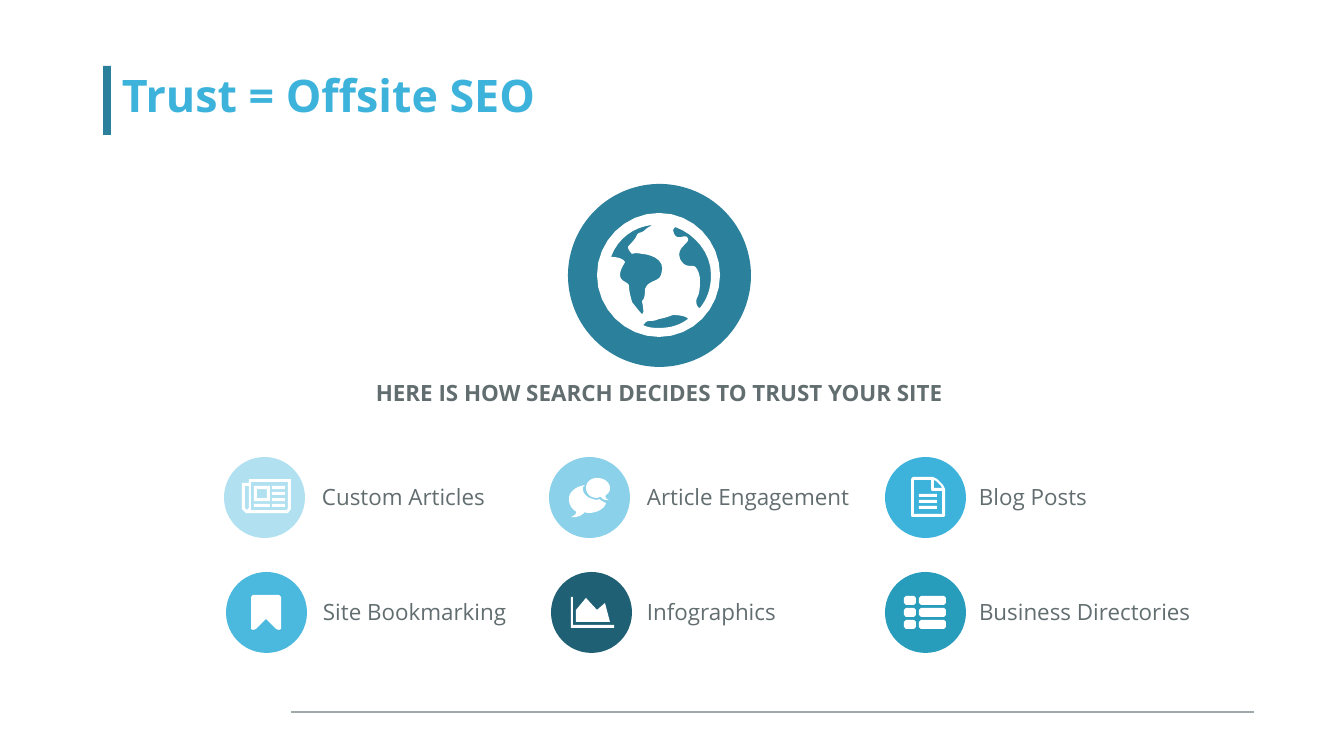
from dataclasses import dataclass

from pptx import Presentation
from pptx.dml.color import RGBColor
from pptx.enum.shapes import MSO_CONNECTOR as Connector, MSO_SHAPE as Shape
from pptx.enum.text import MSO_AUTO_SIZE as AutoSize, PP_ALIGN as Align
from pptx.util import Pt
from lxml.etree import SubElement

SCALE = 914400 / 134.4
DRAWING = "{http://schemas.openxmlformats.org/drawingml/2006/main}"


@dataclass(frozen=True)
class Theme:
    """Colours, font and type sizes of the slide."""
    font: str = "Open Sans"
    title_size: int = 24
    body_size: int = 12
    title: str = "3DB3DC"
    body: str = "626D70"
    accent: str = "2B809C"
    rule: str = "9FA8AB"
    icon: str = "FFFFFF"


def emu(px):
    """Turn px into EMU."""
    return round(px * SCALE)


def block(left, top, width, height, cut=0):
    """Return a rectangular contour whose corners may be cut."""
    right, bottom = left + width, top + height
    return [(left + cut, top), (right - cut, top), (right, top + cut), (right, bottom - cut),
            (right - cut, bottom), (left + cut, bottom), (left, bottom - cut), (left, top + cut)]


def flatten(contour, steps=8):
    """Return a contour's points, sampling its six-number cubic curves."""
    points = [contour[0]]
    for step in contour[1:]:
        if len(step) == 2:
            points.append(step)
            continue
        x0, y0 = points[-1]
        x1, y1, x2, y2, x3, y3 = step
        for index in range(1, steps + 1):
            t = index / steps
            a, b, c, d = (1 - t) ** 3, 3 * t * (1 - t) ** 2, 3 * t * t * (1 - t), t ** 3
            points.append((a * x0 + b * x1 + c * x2 + d * x3, a * y0 + b * y1 + c * y2 + d * y3))
    return [(emu(x), emu(y)) for x, y in points]


class Painter:
    """Holds the theme and the current slide and draws each kind of element."""

    def __init__(self, page, theme):
        """Keep the slide and its theme."""
        self.shapes, self.theme = page.shapes, theme

    def paint(self, shape, color):
        """Give a shape a flat fill without line or shadow."""
        shape.shadow.inherit = False
        shape.fill.solid()
        shape.fill.fore_color.rgb = RGBColor.from_string(color)
        shape.line.fill.background()

    def shape(self, kind, area, color):
        """Draw a preset shape."""
        self.paint(self.shapes.add_shape(kind, *map(emu, area)), color)

    def icon(self, contours):
        """Draw all contours as one outline; inner contours are holes."""
        first, *others = map(flatten, contours)
        builder = self.shapes.build_freeform(*first[0], scale=1.0)
        builder.add_line_segments(first[1:])
        for points in others:
            builder.move_to(*points[0])
            builder.add_line_segments(points[1:])
        self.paint(builder.convert_to_shape(), self.theme.icon)

    def rule(self, left, right, y):
        """Draw a thin horizontal line."""
        line = self.shapes.add_connector(Connector.STRAIGHT, *map(emu, (left, y, right, y)))
        line.line.width = Pt(1)
        line.line.color.rgb = RGBColor.from_string(self.theme.rule)
        SubElement(line._element.spPr, DRAWING + "effectLst")

    def text(self, words, area, size=None, color=None, bold=False, inset=(9, 5), **layout):
        """Write one paragraph in a text box."""
        frame = self.shapes.add_textbox(*map(emu, area)).text_frame
        across, down = map(emu, inset)
        para = frame.paragraphs[0]
        span = para.add_run()
        span.text = words
        span.font.color.rgb = RGBColor.from_string(color or self.theme.body)
        formats = (
            (frame, {"word_wrap": True, "auto_size": AutoSize.SHAPE_TO_FIT_TEXT,
                     "margin_left": across, "margin_right": across,
                     "margin_top": down, "margin_bottom": down}),
            (para, layout),
            (span.font, {"name": self.theme.font, "size": Pt(size or self.theme.body_size),
                         "bold": bold}),
        )
        for target, values in formats:
            for name, value in values.items():
                setattr(target, name, value)


NEWSPAPER = [
    [(249, 479), (291, 479), (291, 509), (288, 513), (246, 513), (242, 509), (242, 483), (249, 483)],
    [(249, 486), (245, 486), (245, 508), (247, 510), (249, 508)],
    [(251, 482), (288, 482), (288, 508), (287, 510), (251, 510)],
    block(254, 486, 16, 15), block(257, 489, 10, 9), block(254, 504, 16, 3),
    *(block(272, 486 + 6 * row, 13, 3) for row in range(4)),
]
BUBBLES = [
    [(606, 495), (605, 496, 605, 499, 609, 500), (609, 500, 603, 501, 601, 497),
     (599, 497, 598, 498, 597, 498), (590, 498, 586, 493, 586, 488), (586, 483, 590, 478, 597, 478),
     (605, 478, 610, 483, 610, 488), (610, 491, 609, 493, 606, 495)],
    [(583, 489), (583, 495, 589, 499, 597, 500), (597, 500, 598, 500, 599, 499),
     (602, 501, 605, 503, 606, 503), (605, 508, 598, 513, 589, 513), (587, 513, 586, 513, 585, 512),
     (579, 519, 571, 517, 571, 517), (577, 515, 577, 511, 575, 511), (571, 508, 569, 504, 569, 499),
     (569, 492, 575, 487, 585, 485), (583, 487, 583, 487, 583, 489)],
]
DOCUMENT = [
    [(913, 477), (933, 477), (937, 479), (943, 485), (945, 489), (945, 516), (944, 517),
     (912, 517), (911, 516), (911, 479)],
    [(914, 480), (931, 480), (931, 490), (932, 491), (942, 491), (942, 514), (914, 514)],
    [(934, 488), (942, 488), (941, 486), (936, 481), (934, 480)],
    *(block(919, 494 + 6 * row, 18, 3) for row in range(3)),
]
BOOKMARK = [[(253, 595), (279, 595), (281, 597), (281, 629), (279, 630), (276, 629), (266, 619),
             (256, 629), (253, 630), (251, 629), (251, 597)]]
CHART = [
    [(614, 628), (571, 628), (571, 597), (573, 597), (573, 625), (614, 625)],
    [(610, 622), (576, 622), (576, 610), (586, 598), (597, 610), (605, 603)],
]
LISTING = [block(left, 596 + 12 * row, width, 9, 2)
           for row in range(3) for left, width in ((904, 12), (919, 27))]
GLOBE = [
    [(659, 213), (625, 213, 597, 241, 597, 275), (597, 309, 625, 337, 659, 337),
     (693, 337, 720, 309, 720, 275), (720, 241, 693, 213, 659, 213)],
    [(711, 275), (711, 289, 707, 299, 700, 308), (697, 308, 695, 302, 697, 298),
     (700, 293, 700, 285, 700, 280), (700, 275, 697, 266, 693, 266), (687, 266, 684, 266, 680, 259),
     (675, 246, 693, 243, 687, 237), (684, 234, 675, 243, 673, 230), (675, 227),
     (695, 234, 711, 253, 711, 275)],
    [(652, 225), (650, 227, 648, 227, 645, 230), (641, 234, 638, 231, 636, 237),
     (634, 241, 628, 246, 628, 247), (628, 250, 632, 254, 632, 254), (634, 253, 638, 253, 642, 254),
     (645, 254, 668, 257, 661, 275), (659, 282, 648, 280, 645, 289), (645, 292, 645, 299, 642, 301),
     (642, 302, 645, 314, 642, 314), (641, 314, 632, 302, 632, 302), (632, 301, 629, 293, 629, 286),
     (629, 282, 620, 282, 620, 275), (620, 269, 625, 263, 625, 262), (622, 257, 613, 257, 611, 257),
     (618, 238, 634, 227, 652, 225)],
    [(643, 325), (645, 324, 645, 321, 650, 321), (652, 321, 655, 321, 659, 319),
     (661, 319, 668, 317, 673, 315), (677, 315, 687, 316, 688, 319), (680, 325, 671, 328, 659, 328),
     (655, 328, 648, 328, 643, 325)],
]
ROWS = {
    457: (("Custom Articles", 224, 313, 224, "B1E1F1", NEWSPAPER),
          ("Article Engagement", 549, 638, 235, "8BD1EA", BUBBLES),
          ("Blog Posts", 885, 970, 176, "3DB3DC", DOCUMENT)),
    572: (("Site Bookmarking", 226, 314, 212, "4BB8DE", BOOKMARK),
          ("Infographics", 551, 638, 176, "206075", CHART),
          ("Business Directories", 885, 970, 306, "279CBB", LISTING)),
}


def main():
    """Build the slide and save it."""
    deck = Presentation()
    deck.slide_width, deck.slide_height = emu(1344), emu(756)
    theme = Theme()
    painter = Painter(deck.slides.add_slide(deck.slide_layouts[6]), theme)
    painter.rule(291, 1254, 712)
    painter.text("Trust = Offsite SEO", (117, 75, 1013, 50), theme.title_size, theme.title,
                 True, (5, 3), line_spacing=0.8)
    painter.shape(Shape.RECTANGLE, (103, 66, 8, 69), theme.accent)
    for top, topics in ROWS.items():
        for label, left, label_left, width, color, contours in topics:
            painter.shape(Shape.OVAL, (left, top, 81, 81), color)
            painter.icon(contours)
            painter.text(label, (label_left, top + 21, width, 38))
    painter.shape(Shape.OVAL, (568, 184, 183, 183), theme.accent)
    painter.icon(GLOBE)
    painter.text("HERE IS HOW SEARCH DECIDES TO TRUST YOUR SITE", (267, 374, 785, 38),
                 bold=True, alignment=Align.CENTER)
    deck.save("out.pptx")


if __name__ == "__main__":
    main()
